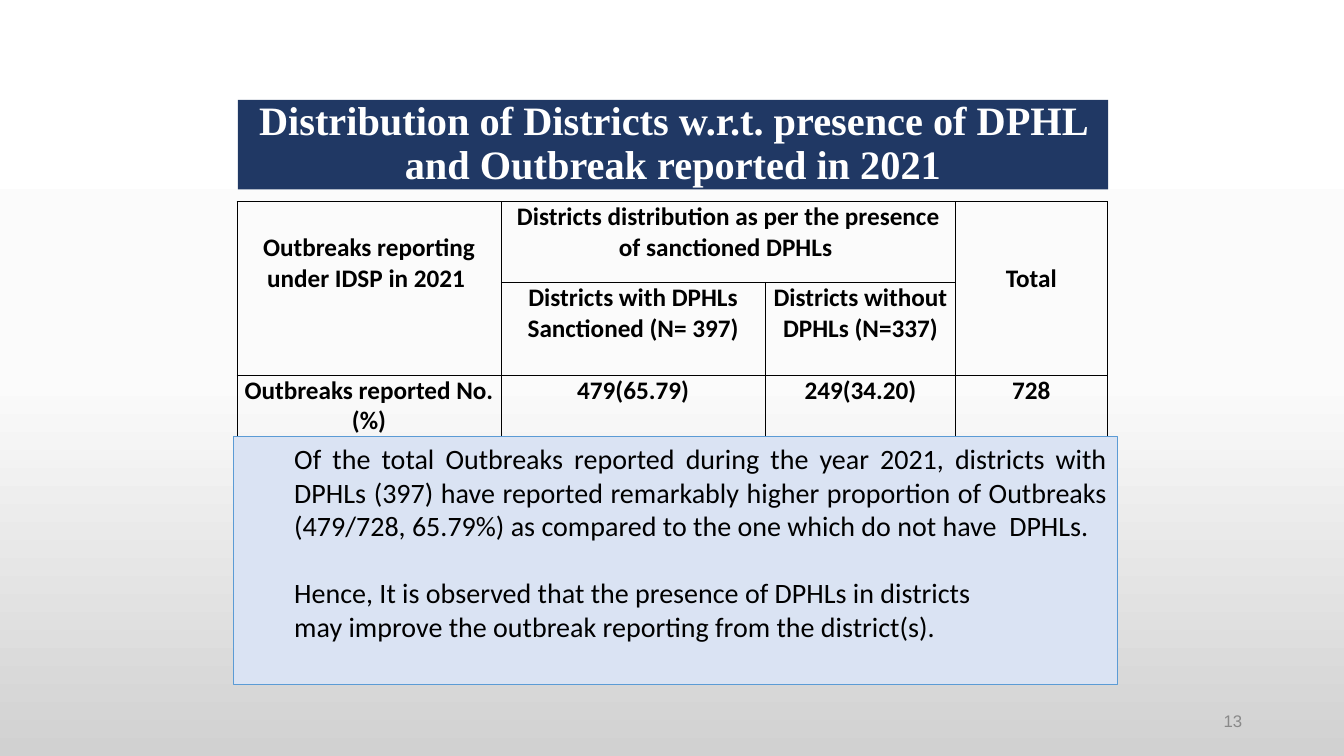
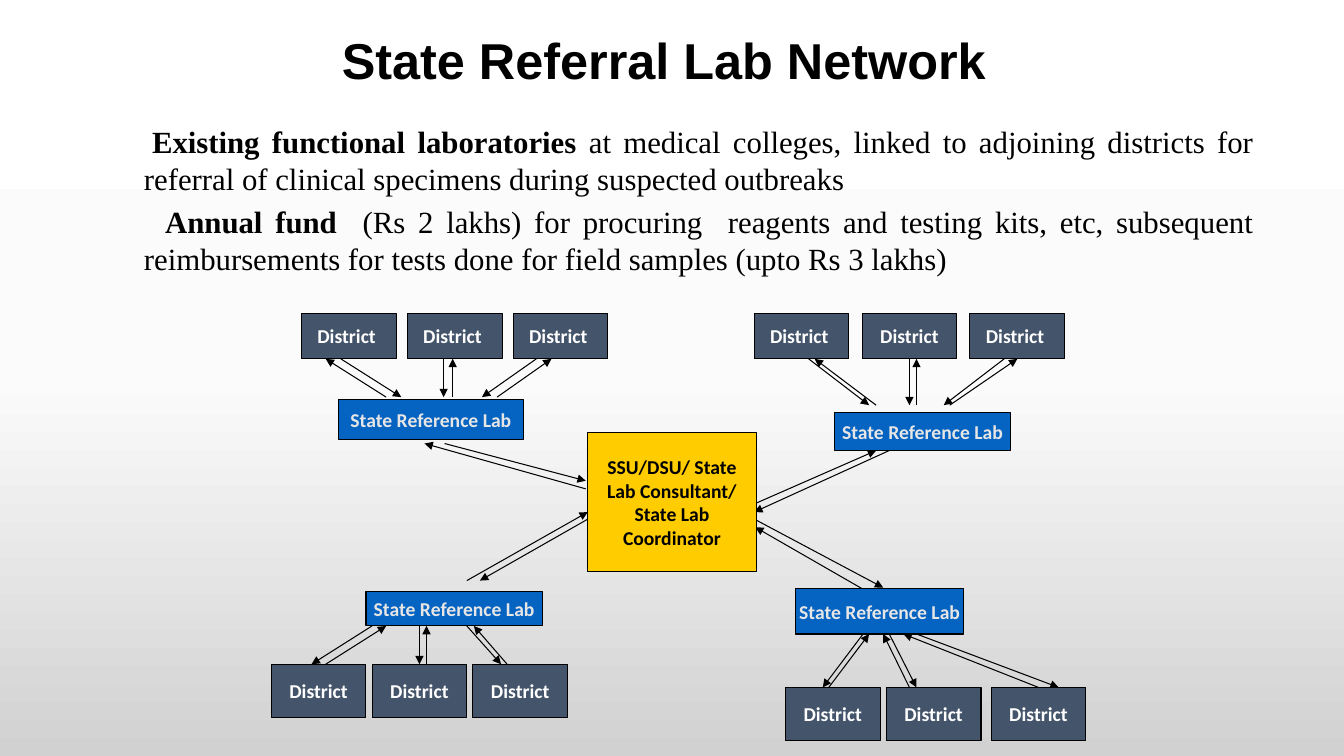
import copy

import lxml.etree
import pptx
import pptx.dml.color
import pptx.enum.shapes
import pptx.enum.text
import pptx.oxml.ns
import pptx.util

PX = 9144
ALIGN = pptx.enum.text.PP_ALIGN
ANCHOR = pptx.enum.text.MSO_ANCHOR
COLORS = {
    "black": "000000",
    "white": "FFFFFF",
    "navy": "203864",
    "slate": "44546A",
    "blue": "0563C1",
    "pale_grey": "E7E6E6",
    "yellow": "FFCC00",
    "note_fill": "DAE3F3",
    "note_line": "5B9BD5",
    "page_number": "898989",
}
BACKGROUND = [(0, "FFFFFF"), (0.5, "FBFBFB"), (1, "D1D1D1")]


def rgb(value):
    return pptx.dml.color.RGBColor.from_string(value)


def px(*lengths):
    return [pptx.util.Emu(length * PX) for length in lengths]


def add_xml(parent, tag, **attributes):
    child = lxml.etree.SubElement(parent, pptx.oxml.ns.qn(tag))
    for name, value in attributes.items():
        child.set(name, str(value))
    return child


def write(frame, text, size=14, font="Calibri", color="black", bold=False,
          align=ALIGN.CENTER, left=0, indent=0, before=0, spacing=1.0):
    para = frame.paragraphs[0]
    if para.runs:
        para = frame.add_paragraph()
    para.alignment = align
    para.space_before = pptx.util.Pt(before)
    para.line_spacing = spacing
    properties = para._p.get_or_add_pPr()
    properties.set("marL", str(left * PX))
    properties.set("indent", str(indent * PX))
    parts = [(text, bold)] if isinstance(text, str) else text
    for words, weight in parts:
        span = para.add_run()
        span.text = words
        span.font.name = font
        span.font.size = pptx.util.Pt(size)
        span.font.bold = weight
        span.font.color.rgb = rgb(COLORS[color])


class SlideBuilder:
    def __init__(self):
        self.deck = pptx.Presentation()
        self.deck.slide_width, self.deck.slide_height = px(1333, 750)
        self.page = None

    def start_page(self):
        self.page = self.deck.slides.add_slide(self.deck.slide_layouts[5])
        fill = self.page.background.fill
        fill.gradient()
        fill.gradient_angle = 270
        first = next(self.page.element.iter(pptx.oxml.ns.qn("a:gs")))
        first.addnext(copy.deepcopy(first))
        for stop, (position, color) in zip(fill.gradient_stops, BACKGROUND):
            stop.position = position
            stop.color.rgb = rgb(color)

    def title(self, area, text, fill=None, **style):
        box = self.page.shapes.title
        box.left, box.top, box.width, box.height = px(*area)
        if fill:
            box.fill.solid()
            box.fill.fore_color.rgb = rgb(COLORS[fill])
        frame = box.text_frame
        frame.auto_size = pptx.enum.text.MSO_AUTO_SIZE.NONE
        frame.vertical_anchor = ANCHOR.MIDDLE
        write(frame, text, bold=True, spacing=0.9, **style)

    def text_box(self, area, anchor=ANCHOR.TOP):
        frame = self.page.shapes.add_textbox(*px(*area)).text_frame
        frame.word_wrap = True
        frame.vertical_anchor = anchor
        return frame

    def rectangle(self, area, fill, line="black", anchor=ANCHOR.MIDDLE, wrap=True):
        box = self.page.shapes.add_shape(
            pptx.enum.shapes.MSO_SHAPE.RECTANGLE, *px(*area))
        box.shadow.inherit = False
        box.fill.solid()
        box.fill.fore_color.rgb = rgb(COLORS[fill])
        box.line.color.rgb = rgb(COLORS[line])
        box.line.width = pptx.util.Pt(0.75)
        box.text_frame.word_wrap = wrap
        box.text_frame.vertical_anchor = anchor
        return box.text_frame

    def arrow(self, *ends):
        line = self.page.shapes.add_connector(
            pptx.enum.shapes.MSO_CONNECTOR.STRAIGHT, *px(*ends))
        line.line.color.rgb = rgb(COLORS["black"])
        line.line.width = pptx.util.Pt(0.75)
        add_xml(line.line._get_or_add_ln(), "a:tailEnd", type="triangle")
        add_xml(line._element.spPr, "a:effectLst")

    def table(self, area, widths, heights, merges, texts):
        table = self.page.shapes.add_table(len(heights), len(widths), *px(*area)).table
        table.first_row = table.horz_banding = False
        for column, width in zip(table.columns, px(*widths)):
            column.width = width
        for row, height in zip(table.rows, px(*heights)):
            row.height = height
        for start, end in merges:
            table.cell(*start).merge(table.cell(*end))
        for cell in table.iter_cells():
            self.style_cell(cell)
        for place, (text, top) in texts.items():
            cell = table.cell(*place)
            cell.margin_top = px(top)[0]
            write(cell.text_frame, text, size=18, bold=True)

    def style_cell(self, cell):
        cell.margin_left, cell.margin_right, cell.margin_top, cell.margin_bottom = px(6, 6, 0, 0)
        properties = cell._tc.get_or_add_tcPr()
        for side in ("a:lnL", "a:lnR", "a:lnT", "a:lnB"):
            border = add_xml(properties, side, w=6350)
            fill = add_xml(border, "a:solidFill")
            add_xml(fill, "a:srgbClr", val=COLORS["black"])
        cell.fill.background()

    def arrows_between(self, cluster):
        district_y, lab_y = cluster["arrow_rows"]
        for district_x, lab_x in cluster["to_lab"]:
            self.arrow(district_x, district_y, lab_x, lab_y)
        for district_x, lab_x in cluster["to_district"]:
            self.arrow(lab_x, lab_y, district_x, district_y)

    def boxes_of(self, cluster):
        top, height = cluster["district_row"]
        for left, label in zip(cluster["lefts"], cluster["labels"]):
            district = self.rectangle((left, top, 94, height), "slate", wrap=False)
            write(district, label, color="white", bold=True)
        lab = self.rectangle(cluster["lab"], "blue", wrap=False)
        write(lab, "State Reference Lab", color="pale_grey", bold=True)


CLUSTERS = [
    dict(lefts=(299, 404, 509), district_row=(311, 45), labels=["District "] * 3,
         lab=(336, 396, 183, 40), arrow_rows=(356, 394),
         to_lab=[(338, 398), (440, 440), (532, 478)],
         to_district=[(323, 383), (449, 449), (547, 493)]),
    dict(lefts=(748, 855, 962), district_row=(311, 45),
         labels=["District ", "District", "District "],
         lab=(828, 409, 174, 38), arrow_rows=(356, 402),
         to_lab=[(802, 862), (902, 902), (996, 936)],
         to_district=[(808, 869), (909, 909), (1009, 942)]),
    dict(lefts=(269, 369, 469), district_row=(659, 53), labels=["District"] * 3,
         lab=(363, 587, 175, 34), arrow_rows=(659, 621),
         to_lab=[(323, 383), (423, 423), (503, 470)],
         to_district=[(309, 369), (416, 416), (497, 463)]),
    dict(lefts=(779, 879, 983), district_row=(682, 53), labels=["District"] * 3,
         lab=(789, 584, 167, 45), arrow_rows=(682, 629),
         to_lab=[(822, 862), (902, 876), (1030, 896)],
         to_district=[(816, 856), (909, 882), (1050, 909)]),
]
HUB_ARROWS = [
    (441, 440, 581, 477), (581, 485, 421, 440),
    (748, 500, 869, 447), (882, 447, 748, 508),
    (583, 515, 476, 576), (463, 576, 583, 508),
    (735, 508, 876, 583), (855, 584, 749, 523),
]


def build_distribution(builder):
    builder.start_page()
    builder.title(
        (236, 99, 863, 89),
        "Distribution of Districts w.r.t. presence of DPHL and Outbreak reported in 2021",
        fill="navy", size=28.8, font="Times New Roman", color="white")
    builder.table(
        (235, 200, 863, 232), (262, 262, 189, 150), (80, 91, 61),
        [((0, 0), (1, 0)), ((0, 1), (0, 2)), ((0, 3), (1, 3))],
        {
            (0, 0): ("Outbreaks reporting under IDSP in 2021 ", 31),
            (0, 1): ("Districts distribution as per the presence of sanctioned DPHLs ", 0),
            (0, 3): ("Total", 61),
            (1, 1): ("Districts with DPHLs Sanctioned (N= 397)", 0),
            (1, 2): ("Districts without DPHLs (N=337)", 0),
            (2, 0): ("Outbreaks reported No.(%)", 0),
            (2, 1): ("479(65.79)", 0),
            (2, 2): ("249(34.20)", 0),
            (2, 3): ("728", 0),
        })
    note = builder.rectangle((232, 433, 876, 246), "note_fill", "note_line", ANCHOR.TOP)
    for text, before in [
        ("Of the total Outbreaks reported during the year 2021, districts with DPHLs (397) "
         "have reported remarkably higher proportion of Outbreaks (479/728, 65.79%) "
         "as compared to the one which do not have  DPHLs. ", 0),
        ("Hence, It is observed that the presence of DPHLs in districts ", 24),
        ("may improve the outbreak reporting from the district(s).", 0),
    ]:
        write(note, text, size=20, align=ALIGN.JUSTIFY, left=50, before=before)
    number = builder.text_box((942, 695, 300, 40), ANCHOR.MIDDLE)
    write(number, "13", size=12, font="Arial", color="page_number", align=ALIGN.RIGHT)


def build_network(builder):
    builder.start_page()
    builder.title((329, 0, 675, 125), "State Referral Lab Network",
                  size=36, font="Arial", align=ALIGN.LEFT)
    for cluster in CLUSTERS:
        builder.arrows_between(cluster)
    for ends in HUB_ARROWS:
        builder.arrow(*ends)
    for cluster in CLUSTERS:
        builder.boxes_of(cluster)
    hub = builder.rectangle((583, 429, 167, 138), "yellow")
    write(hub, "SSU/DSU/ State Lab Consultant/ State Lab Coordinator", bold=True)
    body = builder.text_box((93, 117, 1160, 246))
    for heading, detail, indent in [
        ("Existing functional laboratories ",
         "at medical colleges, linked to adjoining districts for referral of clinical "
         "specimens during suspected outbreaks", 8),
        ("Annual fund  ",
         "(Rs 2 lakhs) for procuring  reagents and testing kits, etc, subsequent "
         "reimbursements for tests done for field samples (upto Rs 3 lakhs)", 21),
    ]:
        write(body, [(heading, True), (detail, False)], size=22, font="Times New Roman",
              align=ALIGN.JUSTIFY, left=40, indent=indent, before=4.4)


def main():
    builder = SlideBuilder()
    build_distribution(builder)
    build_network(builder)
    builder.deck.save("out.pptx")


if __name__ == "__main__":
    main()
